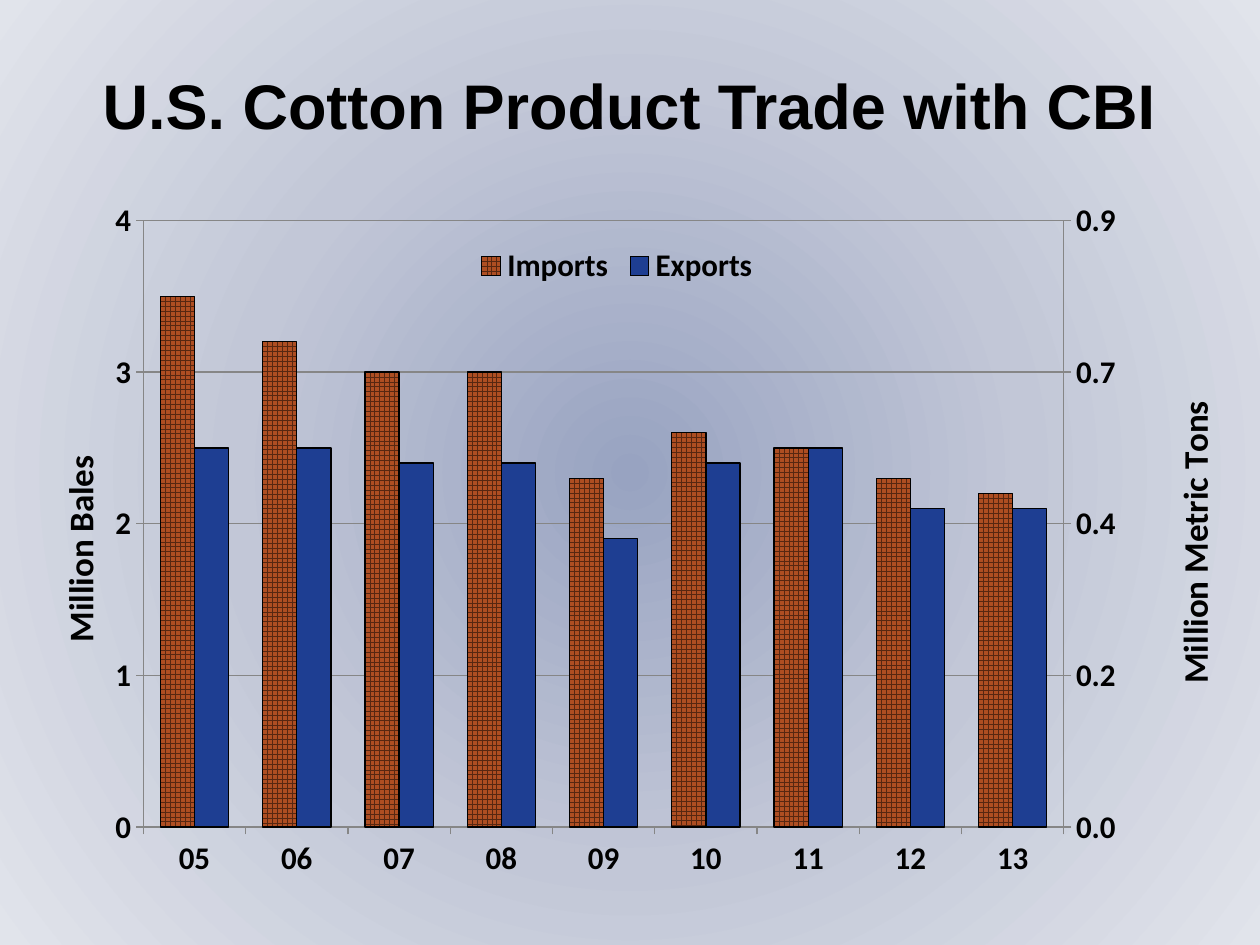
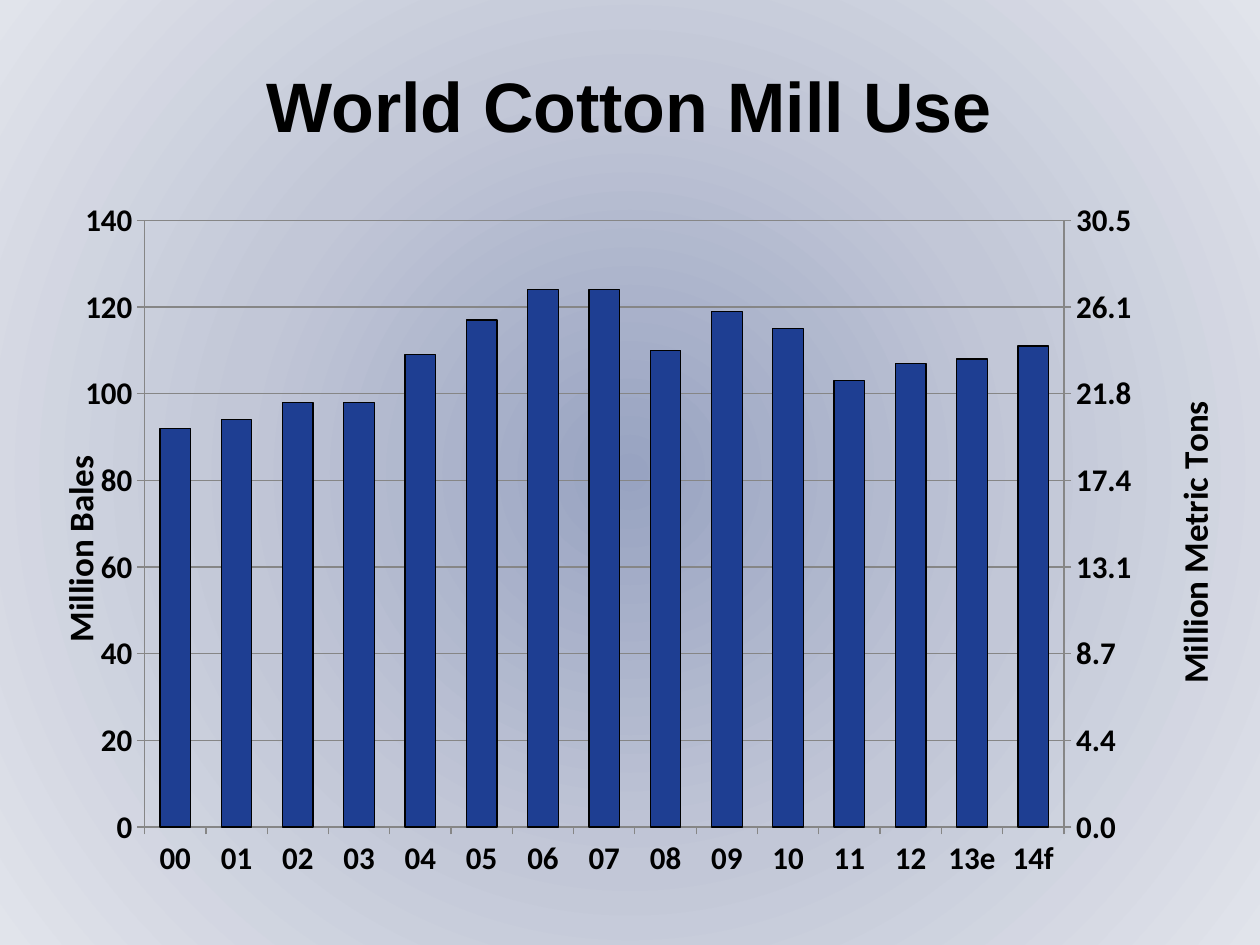
import copy
import dataclasses

import pptx
import pptx.chart.axis
import pptx.chart.data
import pptx.dml.color
import pptx.enum.chart
import pptx.enum.dml
import pptx.enum.text
import pptx.oxml
import pptx.oxml.ns
import pptx.util

Cm = pptx.util.Cm
Pt = pptx.util.Pt
TITLE_ONLY = 5


@dataclasses.dataclass(frozen=True)
class Theme:
    backdrop: tuple = ((0, "98A3C1"), (50, "C2C7D7"), (100, "E1E4EB"))
    ink: str = "000000"
    grid: str = "868686"
    blue: str = "1E3E92"
    rust: str = "AE4E22"
    rust_grid: str = "572711"
    title_font: str = "Arial"
    chart_font: str = "Calibri"
    label_size: int = 18
    axis_title_size: int = 20
    line_width: float = 0.75


THEME = Theme()
TITLE_BOX = (0.64, 0.84, 24.1, 2.54)
CHART_BOX = (0.64, 2.97, 24.1, 15.21)
LEGEND_BOX = (37.3, 12.7, 25, 6)
LEFT_TITLE_AT = (1.5, 39.6)
RIGHT_TITLE_AT = (96.3, 32.2)


def rgb(value):
    return pptx.dml.color.RGBColor.from_string(value)


def xml(tag, body):
    prefixes = pptx.oxml.ns.nsdecls("a", "c")
    return pptx.oxml.parse_xml(f"<{tag} {prefixes}>{body}</{tag}>")


def apply(obj, values):
    for name, value in values.items():
        setattr(obj, name, value)


def set_font(font, name, size):
    apply(font, {"name": name, "size": Pt(size), "bold": True})
    font.color.rgb = rgb(THEME.ink)


def set_line(line, color):
    line.color.rgb = rgb(color)
    line.width = Pt(THEME.line_width)


def set_box(obj, box):
    apply(obj, dict(zip(("left", "top", "width", "height"), map(Cm, box))))


def set_layout(parent, index, percents, inner=False):
    for old in parent.xpath("./c:layout"):
        parent.remove(old)
    body = '<c:layoutTarget val="inner"/>' if inner else ""
    body += '<c:xMode val="edge"/><c:yMode val="edge"/>'
    for tag, percent in zip("xywh", percents):
        body += f'<c:{tag} val="{percent / 100:.3f}"/>'
    parent.insert(index, xml("c:layout", f"<c:manualLayout>{body}</c:manualLayout>"))


def paint_backdrop(master):
    master.background.fill.gradient()
    grad = master.element.xpath("./p:cSld/p:bg//a:gradFill")[0]
    stops = "".join(
        f'<a:gs pos="{pos * 1000}"><a:srgbClr val="{color}"/></a:gs>'
        for pos, color in THEME.backdrop
    )
    center = '<a:fillToRect l="50000" t="50000" r="50000" b="50000"/>'
    body = f'<a:gsLst>{stops}</a:gsLst><a:path path="circle">{center}</a:path>'
    grad.getparent().replace(grad, xml("a:gradFill", body))


def add_title(s, text, size):
    sp = s.shapes.title
    set_box(sp, TITLE_BOX)
    tf = sp.text_frame
    apply(tf, {
        "word_wrap": True,
        "auto_size": pptx.enum.text.MSO_AUTO_SIZE.NONE,
        "vertical_anchor": pptx.enum.text.MSO_ANCHOR.MIDDLE,
    })
    p = tf.paragraphs[0]
    p.alignment = pptx.enum.text.PP_ALIGN.CENTER
    r = p.add_run()
    r.text = text
    set_font(r.font, THEME.title_font, size)


def format_value_axis(axis, element, title, at, top, steps, number_format):
    apply(axis, {
        "minimum_scale": 0,
        "maximum_scale": top,
        "major_unit": top / steps,
        "major_tick_mark": pptx.enum.chart.XL_TICK_MARK.OUTSIDE,
    })
    apply(axis.tick_labels, {
        "number_format": number_format,
        "number_format_is_linked": False,
    })
    set_line(axis.format.line, THEME.grid)
    tf = axis.axis_title.text_frame
    tf.text = title
    set_font(tf.paragraphs[0].runs[0].font, THEME.chart_font, THEME.axis_title_size)
    heading = element.xpath("./c:title")[0]
    body = heading.xpath(".//a:bodyPr")[0]
    body.set("rot", "-5400000")
    body.set("vert", "horz")
    set_layout(heading, 1, at)


def format_category_axis(axis):
    apply(axis, {
        "major_tick_mark": pptx.enum.chart.XL_TICK_MARK.OUTSIDE,
        "tick_label_position": pptx.enum.chart.XL_TICK_LABEL_POSITION.LOW,
    })
    set_line(axis.format.line, THEME.grid)


def fill_series(series, style):
    fill, line = series.format.fill, series.format.line
    if style == "hidden":
        fill.background()
        line.fill.background()
        return
    if style == "grid":
        fill.patterned()
        fill.pattern = pptx.enum.dml.MSO_PATTERN.LARGE_GRID
        fill.fore_color.rgb = rgb(THEME.rust_grid)
        fill.back_color.rgb = rgb(THEME.rust)
    else:
        fill.solid()
        fill.fore_color.rgb = rgb(THEME.blue)
    set_line(line, THEME.ink)


def add_right_axis(chart, first_right):
    root = chart.element
    bars = root.xpath(".//c:barChart")[0]
    right_bars = copy.deepcopy(bars)
    bars.addnext(right_bars)
    for ser in bars.xpath("./c:ser")[first_right:]:
        bars.remove(ser)
    for ser in right_bars.xpath("./c:ser")[:first_right]:
        right_bars.remove(ser)

    cat = root.xpath(".//c:catAx")[0]
    val = root.xpath(".//c:valAx")[0]
    right_cat, right_val = copy.deepcopy(cat), copy.deepcopy(val)
    val.addnext(right_val)
    right_val.addnext(right_cat)
    ids = {
        cat.xpath("./c:axId")[0].get("val"): "50010",
        val.xpath("./c:axId")[0].get("val"): "50020",
    }
    for part in (right_bars, right_cat, right_val):
        for ref in part.xpath("./c:axId | ./c:crossAx"):
            ref.set("val", ids[ref.get("val")])
    right_cat.xpath("./c:delete")[0].set("val", "1")
    right_val.xpath("./c:axPos")[0].set("val", "r")
    right_val.xpath("./c:crosses")[0].set("val", "max")
    axis = pptx.chart.axis.ValueAxis(right_val)
    axis.has_major_gridlines = False
    return axis, right_val


def add_legend(chart, hidden):
    chart.has_legend = True
    apply(chart.legend, {
        "position": pptx.enum.chart.XL_LEGEND_POSITION.TOP,
        "include_in_layout": False,
    })
    set_font(chart.legend.font, THEME.chart_font, THEME.label_size)
    legend = chart.element.xpath(".//c:legend")[0]
    set_layout(legend, 1, LEGEND_BOX)
    for place, index in enumerate(hidden, 1):
        entry = f'<c:idx val="{index}"/><c:delete val="1"/>'
        legend.insert(place, xml("c:legendEntry", entry))


def add_trade_chart(s, categories, series, bales_top, tons_top, steps, plot_box, legend):
    data = pptx.chart.data.CategoryChartData()
    data.categories = categories
    for name, _, values in series:
        data.add_series(name, values)
    kind = pptx.enum.chart.XL_CHART_TYPE.COLUMN_CLUSTERED
    chart = s.shapes.add_chart(kind, *map(Cm, CHART_BOX), data).chart
    apply(chart, {"has_title": False, "has_legend": False})
    set_font(chart.font, THEME.chart_font, THEME.label_size)
    plot = chart.plots[0]
    apply(plot, {"gap_width": 100, "overlap": 0, "vary_by_categories": False})
    for item, (_, style, _) in zip(plot.series, series):
        fill_series(item, style)

    format_category_axis(chart.category_axis)
    left = chart.value_axis
    left.has_major_gridlines = True
    set_line(left.major_gridlines.format.line, THEME.grid)
    left_element = chart.element.xpath(".//c:valAx")[0]
    format_value_axis(left, left_element, "Million Bales", LEFT_TITLE_AT,
                      bales_top, steps, "#,##0")
    hidden = [i for i, (_, style, _) in enumerate(series) if style == "hidden"]
    right, right_element = add_right_axis(chart, hidden[0])
    format_value_axis(right, right_element, "Million Metric Tons", RIGHT_TITLE_AT,
                      tons_top, steps, "#,##0.0")
    set_layout(chart.element.xpath(".//c:plotArea")[0], 0, plot_box, inner=True)
    if legend:
        add_legend(chart, hidden)


def add_chart_slide(prs, title, size, **chart):
    s = prs.slides.add_slide(prs.slide_layouts[TITLE_ONLY])
    add_title(s, title, size)
    add_trade_chart(s, **chart)


def main():
    prs = pptx.Presentation()
    apply(prs, {"slide_width": Cm(25.4), "slide_height": Cm(19.05)})
    paint_backdrop(prs.slide_master)
    add_chart_slide(
        prs, "U.S. Cotton Product Trade with CBI", 36,
        categories=[f"{year:02}" for year in range(5, 14)],
        series=[
            ("Imports", "grid", (3.5, 3.2, 3, 3, 2.3, 2.6, 2.5, 2.3, 2.2)),
            ("Exports", "solid", (2.5, 2.5, 2.4, 2.4, 1.9, 2.4, 2.5, 2.1, 2.1)),
            ("Series 3", "hidden",
             (0.75, 0.7, 0.66, 0.64, 0.5, 0.56, 0.55, 0.5, 0.49)),
            ("Series 4", "hidden",
             (0.53, 0.54, 0.52, 0.53, 0.41, 0.53, 0.55, 0.47, 0.46)),
        ],
        bales_top=4, tons_top=0.87, steps=4,
        plot_box=(9.5, 9.7, 78.3, 80.4), legend=True,
    )
    add_chart_slide(
        prs, "World Cotton Mill Use", 40,
        categories=[f"{year:02}" for year in range(13)] + ["13e", "14f"],
        series=[
            ("Series 1", "solid", (92, 94, 98, 98, 109, 117, 124, 124, 110,
                                   119, 115, 103, 107, 108, 111)),
            ("Series 2", "hidden", (20.1, 20.6, 21.4, 21.4, 23.8, 25.5, 27, 26.9,
                                    24, 25.9, 25, 22.5, 23.3, 23.6, 24.3)),
        ],
        bales_top=140, tons_top=30.5, steps=7,
        plot_box=(9.6, 9.7, 78.2, 80.4), legend=False,
    )
    prs.save("out.pptx")


if __name__ == "__main__":
    main()
